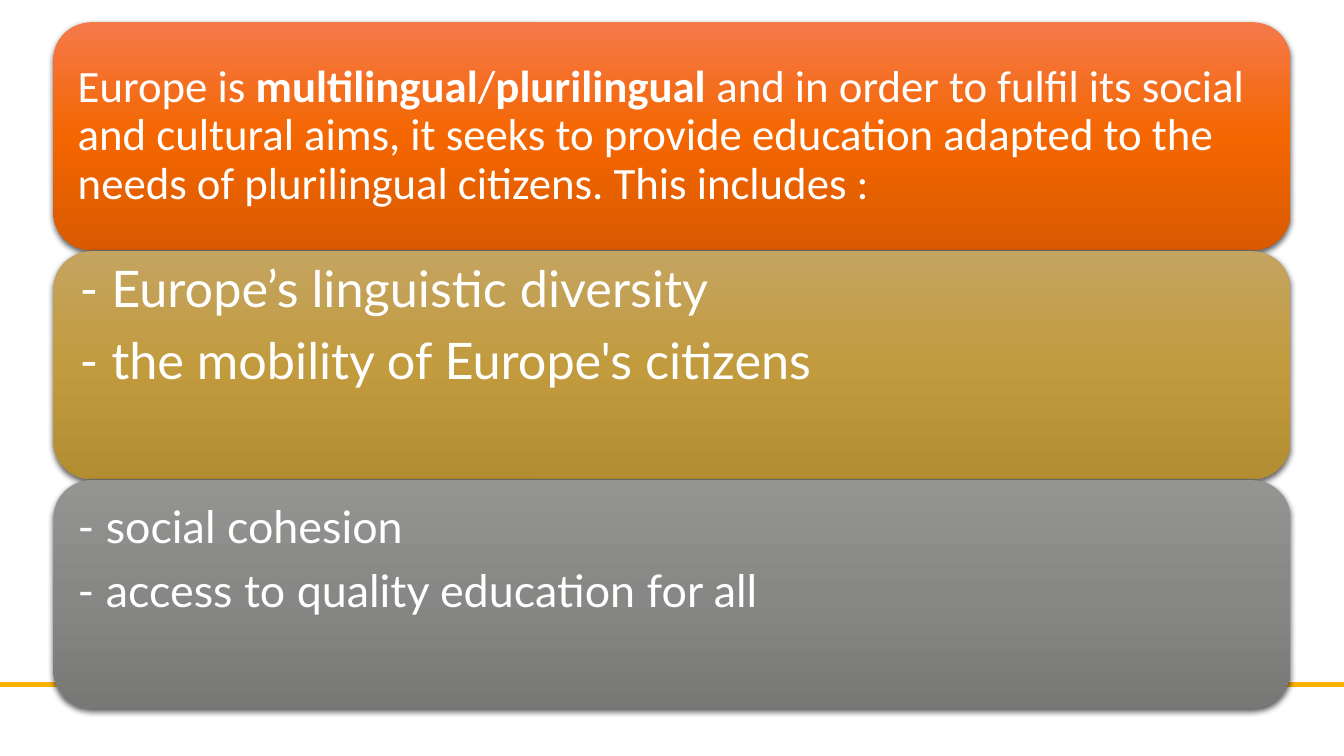
"""Build a slide of three stacked panels on Europe's plurilingual education."""
from dataclasses import dataclass

from pptx import Presentation
from pptx.dml.color import RGBColor
from pptx.enum.shapes import MSO_CONNECTOR as Link, MSO_SHAPE as Form
from pptx.enum.text import MSO_ANCHOR as Anchor
from pptx.oxml import parse_xml
from pptx.oxml.ns import nsdecls
from pptx.slide import Slide
from pptx.util import Cm, Pt

WHITE = RGBColor(0xFF, 0xFF, 0xFF)
GOLD = RGBColor(0xFA, 0xB0, 0x01)
ORANGE = (RGBColor(0xF5, 0x79, 0x4B), RGBColor(0xF4, 0x66, 0x00), RGBColor(0xD9, 0x5A, 0x00))
SAND = (RGBColor(0xC4, 0xA4, 0x61), RGBColor(0xC2, 0x9B, 0x3E), RGBColor(0xB2, 0x8D, 0x31))
GREY = (RGBColor(0x94, 0x94, 0x93), RGBColor(0x87, 0x87, 0x85), RGBColor(0x78, 0x78, 0x76))

WIDE, TALL = 33.87, 19.05
LEFT, TOP, WIDTH, HEIGHT, STEP = 1.35, 0.56, 31.17, 5.74, 5.77
INSET = 0.28


@dataclass
class Run:
    text: str
    bold: bool = False


@dataclass
class Panel:
    tones: tuple[RGBColor, ...]
    font: str
    size: int
    lines: list[list[Run]]
    anchor: Anchor
    side: float
    head: float


PANELS = [
    Panel(ORANGE, "Calibri", 32, [[
        Run("Europe is "),
        Run("multilingual", True),
        Run("/"),
        Run("plurilingual", True),
        Run(" and in order to fulfil its social and cultural aims, it seeks to provide "
            "education adapted to the needs of plurilingual citizens. This includes :"),
    ]], Anchor.MIDDLE, 0.33, 0.33),
    Panel(SAND, "Lato", 36, [
        [Run("- Europe’s linguistic diversity")],
        [Run("- the mobility of Europe's citizens")],
    ], Anchor.TOP, 0.38, 0.05),
    Panel(GREY, "Lato", 32, [
        [Run("- social cohesion")],
        [Run("- access to quality education for all")],
    ], Anchor.TOP, 0.33, 0.33),
]


def add_rule(slide: Slide) -> None:
    rule = slide.shapes.add_connector(Link.STRAIGHT, 0, Cm(17.25), Cm(WIDE), Cm(17.25))
    rule.line.color.rgb = GOLD
    rule.line.width = Pt(3)
    rule._element.spPr.append(parse_xml(f"<a:effectLst {nsdecls('a')}/>"))


def add_card(slide: Slide, panel: Panel, top: float) -> None:
    card = slide.shapes.add_shape(
        Form.ROUNDED_RECTANGLE, Cm(LEFT), Cm(top), Cm(WIDTH), Cm(HEIGHT))
    props = card._element.spPr
    stops = "".join(
        f'<a:gs pos="{spot * 50000}"><a:srgbClr val="{tone}"/></a:gs>'
        for spot, tone in enumerate(panel.tones))
    props.append(parse_xml(
        f'<a:gradFill {nsdecls("a")}><a:gsLst>{stops}</a:gsLst>'
        '<a:lin ang="5400000" scaled="0"/></a:gradFill>'))
    card.line.fill.background()
    props.append(parse_xml(
        f'<a:effectLst {nsdecls("a")}>'
        f'<a:outerShdw blurRad="{Pt(4.5)}" dist="{Pt(1.5)}" dir="5400000" rotWithShape="0">'
        '<a:srgbClr val="000000"><a:alpha val="63000"/></a:srgbClr>'
        '</a:outerShdw></a:effectLst>'))


def add_text(slide: Slide, panel: Panel, top: float) -> None:
    box = slide.shapes.add_textbox(
        Cm(LEFT + INSET), Cm(top + INSET), Cm(WIDTH - 2 * INSET), Cm(HEIGHT - 2 * INSET))
    frame = box.text_frame
    frame.word_wrap = True
    frame.vertical_anchor = panel.anchor
    frame.margin_left = frame.margin_right = Cm(panel.side)
    frame.margin_top = frame.margin_bottom = Cm(panel.head)
    for place, line in enumerate(panel.lines):
        para = frame.add_paragraph() if place else frame.paragraphs[0]
        para.line_spacing = 0.9
        para.space_after = Pt(panel.size * 0.35)
        for part in line:
            run = para.add_run()
            run.text = part.text
            run.font.name = panel.font
            run.font.size = Pt(panel.size)
            run.font.bold = part.bold
            run.font.color.rgb = WHITE


def main() -> None:
    deck = Presentation()
    deck.slide_width, deck.slide_height = Cm(WIDE), Cm(TALL)
    slide = deck.slides.add_slide(deck.slide_layouts[6])
    add_rule(slide)
    for place, panel in enumerate(PANELS):
        top = TOP + place * STEP
        add_card(slide, panel, top)
        add_text(slide, panel, top)
    deck.save("out.pptx")


if __name__ == "__main__":
    main()
